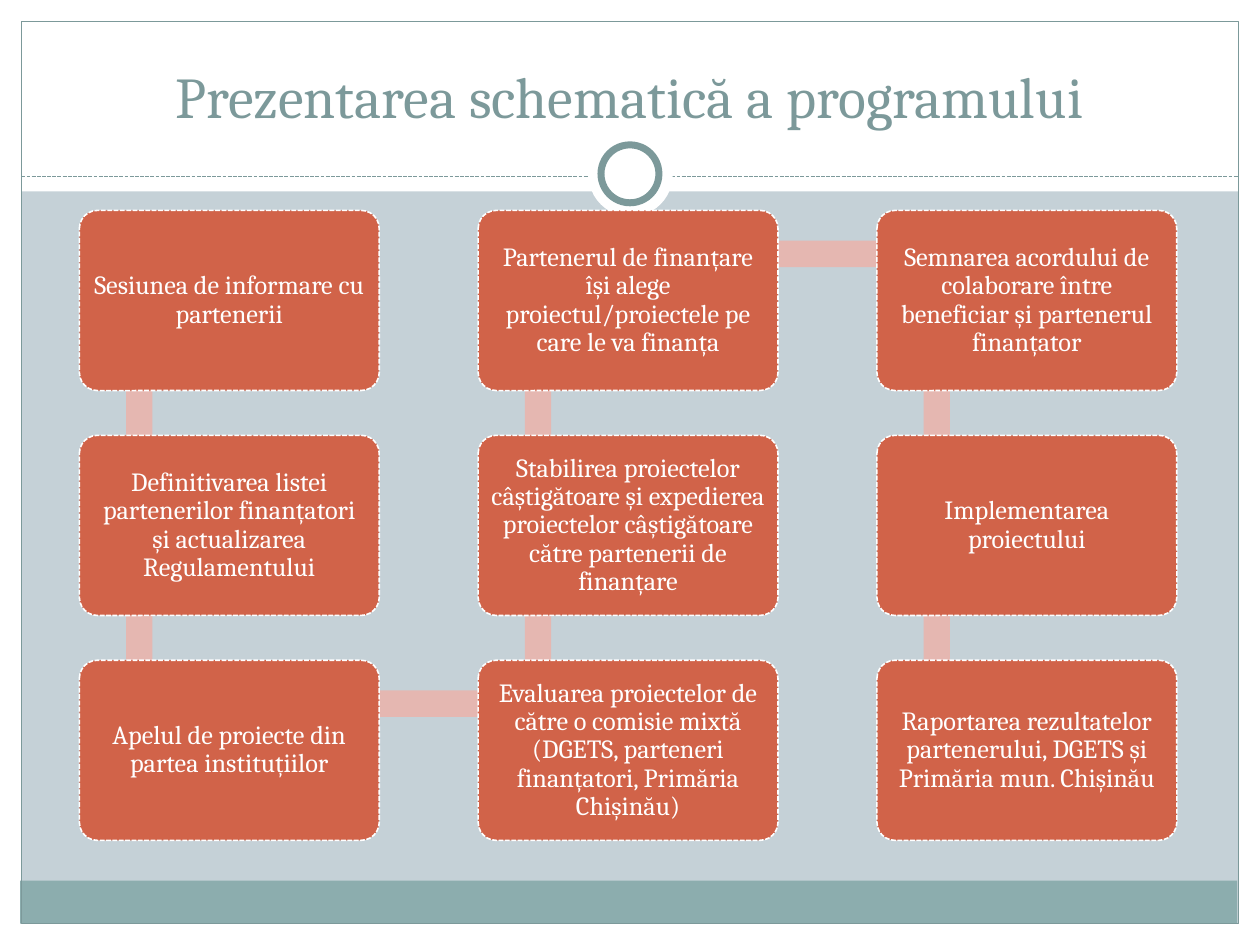
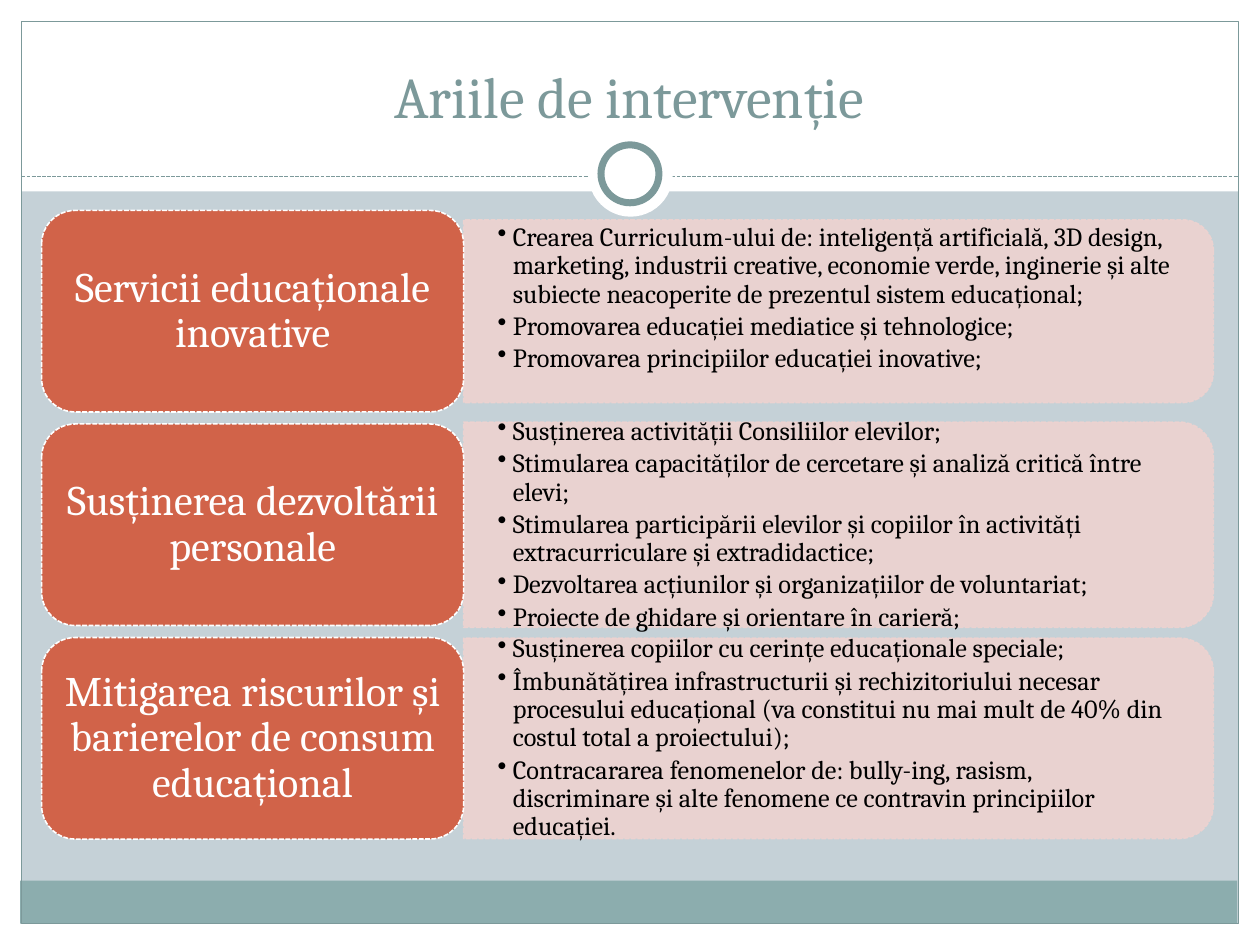
from lxml.etree import SubElement
from pptx import Presentation
from pptx.dml.color import RGBColor
from pptx.enum.dml import MSO_LINE as Dash
from pptx.enum.shapes import MSO_CONNECTOR as Link, MSO_SHAPE as Kind
from pptx.enum.text import MSO_ANCHOR as Anchor, MSO_AUTO_SIZE as Fit, PP_ALIGN as Align
from pptx.oxml.ns import qn
from pptx.util import Inches, Pt

WHITE = RGBColor(0xFF, 0xFF, 0xFF)
BLACK = RGBColor(0x00, 0x00, 0x00)
MIST = RGBColor(0xC5, 0xD1, 0xD7)
TEAL = RGBColor(0x7C, 0x99, 0x9A)
BAND = RGBColor(0x8C, 0xAD, 0xAE)
RUST = RGBColor(0xD1, 0x63, 0x49)
PINK = RGBColor(0xE5, 0xB7, 0xB1)
PALE = RGBColor(0xEE, 0xD3, 0xD0)

FONT = "Cambria"
FRAME = {"word_wrap": True, "auto_size": Fit.NONE, "vertical_anchor": Anchor.MIDDLE}
HEAD = {**FRAME, "vertical_anchor": Anchor.BOTTOM}
SNUG = {**FRAME, **{f"margin_{side}": Inches(0.06)
                    for side in ("left", "right", "top", "bottom")}}
LIST = {**FRAME, "margin_left": Inches(0.27), "margin_right": Inches(0.27),
        "margin_top": Inches(0.14), "margin_bottom": Inches(0.14)}
MID = {"alignment": Align.CENTER}
TIGHT = {**MID, "line_spacing": 0.9}
ITEM = {"alignment": Align.LEFT, "line_spacing": 0.9, "space_after": Pt(2.25)}

STEPS = [
    (0, 0, "Sesiunea de informare cu partenerii"),
    (0, 1, "Definitivarea listei partenerilor finanțatori și actualizarea Regulamentului"),
    (0, 2, "Apelul de proiecte din partea instituțiilor"),
    (1, 2, "Evaluarea proiectelor de către o comisie mixtă (DGETS, parteneri "
           "finanțatori, Primăria Chișinău)"),
    (1, 1, "Stabilirea proiectelor câștigătoare și expedierea proiectelor "
           "câștigătoare către partenerii de finanțare"),
    (1, 0, "Partenerul de finanțare își alege proiectul/proiectele pe care le va finanța"),
    (2, 0, "Semnarea acordului de colaborare între beneficiar și partenerul finanțator"),
    (2, 1, "Implementarea proiectului"),
    (2, 2, "Raportarea rezultatelor partenerului, DGETS și Primăria mun. Chișinău"),
]

AREAS = [
    ("Servicii educaționale inovative", 1.45, -0.1, [
        "Crearea Curriculum-ului de: inteligență artificială, 3D design, marketing, "
        "industrii creative, economie verde, inginerie și alte subiecte neacoperite "
        "de prezentul sistem educațional;",
        "Promovarea educației mediatice și tehnologice;",
        "Promovarea principiilor educației inovative;"]),
    ("Susținerea dezvoltării personale", 1.63, 0, [
        "Susținerea activității Consiliilor elevilor;",
        "Stimularea capacităților de cercetare și analiză critică între elevi;",
        "Stimularea participării elevilor și copiilor în activități "
        "extracurriculare și extradidactice;",
        "Dezvoltarea acțiunilor și organizațiilor de voluntariat;",
        "Proiecte de ghidare și orientare în carieră;"]),
    ("Mitigarea riscurilor și barierelor de consum educațional", 1.59, 0, [
        "Susținerea copiilor cu cerințe educaționale speciale;",
        "Îmbunătățirea infrastructurii și rechizitoriului necesar procesului "
        "educațional (va constitui nu mai mult de 40% din costul total a proiectului);",
        "Contracararea fenomenelor de: bully-ing, rasism, discriminare și alte "
        "fenomene ce contravin principiilor educației."]),
]


def adorn(item, form):
    for key, value in form.items():
        setattr(item, key, value)


class Deck:
    def __init__(self):
        self.show = Presentation()
        adorn(self.show, {"slide_width": Inches(10), "slide_height": Inches(7.5)})
        fill = self.show.slide_master.background.fill
        fill.solid()
        fill.fore_color.rgb = MIST
        self.slide = None

    def page(self, title):
        self.slide = self.show.slides.add_slide(self.show.slide_layouts[5])
        for box in ((0, 7.33, 10, 0.17), (0, 0, 10, 1.52),
                    (0, 0, 0.17, 7.5), (9.83, 0, 0.17, 7.5)):
            self.shape(Kind.RECTANGLE, box, WHITE)
        self.shape(Kind.RECTANGLE, (0.16, 6.99, 9.66, 0.34), BAND)
        self.shape(Kind.RECTANGLE, (0.17, 0.17, 9.66, 7.16), None, TEAL, 0.75)
        self.rule(0.17, 9.83, 1.4)
        self.shape(Kind.OVAL, (4.67, 1.05, 0.67, 0.67), WHITE)
        self.shape(Kind.OVAL, (4.77, 1.15, 0.46, 0.46), WHITE, TEAL, 4)
        head = self.slide.shapes.title
        head.element.getparent().append(head.element)
        adorn(head, dict(zip(("left", "top", "width", "height"),
                             map(Inches, (0.33, 0.25, 9.33, 0.83)))))
        self.label(head, [title], 33, TEAL, HEAD, MID)

    def shape(self, kind, box, fill, line=None, width=0.9, dash=None):
        shape = self.slide.shapes.add_shape(kind, *map(Inches, box))
        shape.shadow.inherit = False
        if fill is None:
            shape.fill.background()
        else:
            shape.fill.solid()
            shape.fill.fore_color.rgb = fill
        if line is None:
            shape.line.fill.background()
        else:
            shape.line.color.rgb = line
            adorn(shape.line, {"width": Pt(width), "dash_style": dash})
        return shape

    def rule(self, start, end, top):
        line = self.slide.shapes.add_connector(
            Link.STRAIGHT, *map(Inches, (start, top, end, top)))
        line.line.color.rgb = TEAL
        adorn(line.line, {"width": Pt(0.75), "dash_style": Dash.SQUARE_DOT})
        SubElement(line.element.spPr, qn("a:effectLst"))

    def label(self, shape, texts, size, tint, frame, form):
        body = shape.text_frame
        adorn(body, frame)
        for spot, text in enumerate(texts):
            para = body.add_paragraph() if spot else body.paragraphs[0]
            adorn(para, form)
            run = para.add_run()
            run.text = text
            adorn(run.font, {"name": FONT, "size": Pt(size)})
            run.font.color.rgb = tint

    def card(self, box, text, size, frame, curve=None):
        card = self.shape(Kind.ROUNDED_RECTANGLE, box, RUST, WHITE, dash=Dash.SQUARE_DOT)
        if curve is not None:
            card.adjustments[0] = curve
        self.label(card, [text], size, WHITE, frame, TIGHT)

    def panel(self, left, mid, width, height):
        box = (left + (width - height) / 2, mid - width / 2, height, width)
        panel = self.shape(Kind.ROUND_2_SAME_RECTANGLE, box, PALE, PALE,
                           dash=Dash.SQUARE_DOT)
        panel.rotation = 90
        for tint in panel.element.spPr.iter(qn("a:srgbClr")):
            SubElement(tint, qn("a:alpha"), val="90000")

    def bullets(self, box, texts):
        text = self.slide.shapes.add_textbox(*map(Inches, box))
        self.label(text, texts, 15, BLACK, LIST, ITEM)
        for prop in text.element.iter(qn("a:pPr")):
            prop.set("marL", str(Inches(0.12)))
            prop.set("indent", str(-Inches(0.12)))
            SubElement(prop, qn("a:buChar"), char="•")


def steps(deck):
    deck.page("Prezentarea schematică a programului")
    wide, high = 6.33 / 2, 3.57 / 2
    spots = [(0.63 + col * wide, 1.67 + row * high) for col, row, _ in STEPS]
    for (left, top), (right, low) in zip(spots, spots[1:]):
        if left == right:
            box = (left + 0.37, min(top, low) + 0.36, 0.21, 1.77)
        else:
            box = (left + 0.48, top + 0.24, 3.15, 0.21)
        deck.shape(Kind.RECTANGLE, box, PINK)
    for (left, top), (_, _, text) in zip(spots, STEPS):
        deck.card((left, top, 2.38, 1.43), text, 15, SNUG, 0.1)


def areas(deck):
    deck.page("Ariile de intervenție")
    for row, (name, high, shift, items) in enumerate(AREAS):
        top = 1.67 + row * 3.39 / 2
        mid = top + 0.8
        deck.panel(3.68, mid, 5.95, high)
        inner = high - 0.15
        deck.bullets((3.68, mid + shift - inner / 2, 5.88, inner), items)
        deck.card((0.33, top, 3.35, 1.6), name, 24, FRAME)


def main():
    deck = Deck()
    steps(deck)
    areas(deck)
    deck.show.save("out.pptx")


if __name__ == "__main__":
    main()
